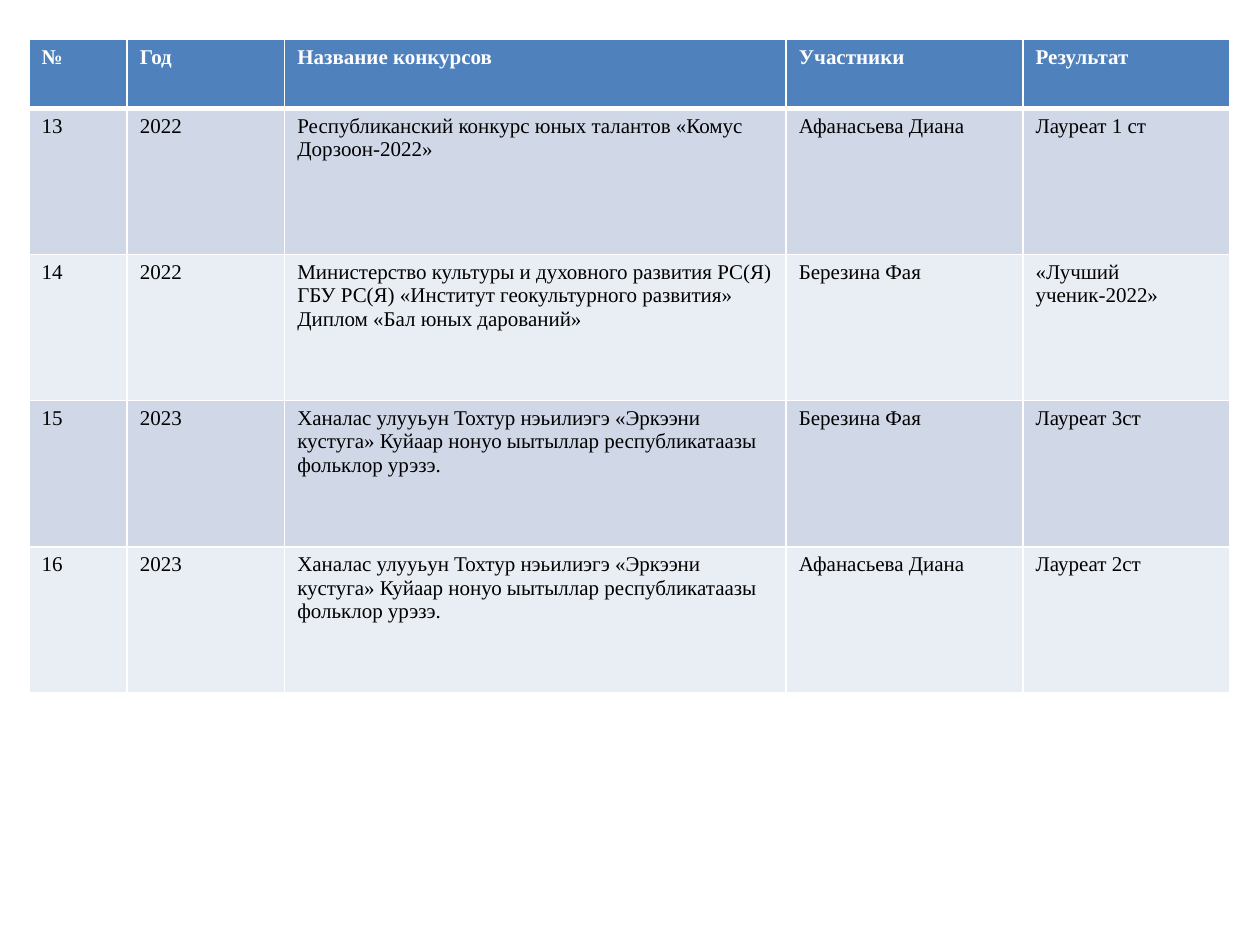
from lxml.etree import SubElement
from pptx import Presentation
from pptx.dml.color import RGBColor
from pptx.oxml.ns import qn
from pptx.util import Inches, Pt

COLORS = {
    "header": "4F81BD",
    "band_dark": "D0D8E8",
    "band_light": "E9EDF4",
    "border": "FFFFFF",
    "header_text": "FFFFFF",
    "body_text": "000000",
}
FONT = "Times New Roman"
COLUMN_WIDTHS = [0.78, 1.25, 3.98, 1.88, 1.64]
HEADER_HEIGHT = 0.55
ROW_HEIGHT = 1.16

HEADINGS = ["№", "Год", "Название конкурсов", "Участники", "Результат"]
FOLKLORE_CONTEST = (
    "Ханалас улууьун Тохтур нэьилиэгэ «Эркээни кустуга» "
    "Куйаар нонуо ыытыллар республикатаазы фольклор урэзэ."
)
CONTESTS = [
    ["13", "2022", "Республиканский конкурс юных талантов «Комус Дорзоон-2022»",
     "Афанасьева Диана", "Лауреат 1 ст"],
    ["14", "2022",
     "Министерство культуры и духовного развития РС(Я)\n"
     "ГБУ РС(Я) «Институт геокультурного развития»\n"
     "Диплом «Бал юных дарований»",
     "Березина Фая", "«Лучший ученик-2022»"],
    ["15", "2023", FOLKLORE_CONTEST, "Березина Фая", "Лауреат 3ст"],
    ["16", "2023", FOLKLORE_CONTEST, "Афанасьева Диана", "Лауреат 2ст"],
]


def rgb(name):
    return RGBColor.from_string(COLORS[name])


def set_borders(cell, top, bottom):
    """Draw white cell borders; top and bottom are widths in points."""
    properties = cell._tc.get_or_add_tcPr()
    for side, width in (("L", 1), ("R", 1), ("T", top), ("B", bottom)):
        line = SubElement(properties, qn(f"a:ln{side}"), w=str(Pt(width)))
        fill = SubElement(line, qn("a:solidFill"))
        SubElement(fill, qn("a:srgbClr"), val=COLORS["border"])


def fill_cell(cell, text, row):
    is_header = row == 0
    set_borders(cell, top=3 if row == 1 else 1, bottom=3 if is_header else 1)
    band = "header" if is_header else ("band_light", "band_dark")[row % 2]
    cell.fill.solid()
    cell.fill.fore_color.rgb = rgb(band)
    cell.text = text
    for paragraph in cell.text_frame.paragraphs:
        font = paragraph.font
        font.name, font.size, font.bold = FONT, Pt(12), is_header
        font.color.rgb = rgb("header_text" if is_header else "body_text")


def add_contest_table(slide, left, top):
    rows = [HEADINGS, *CONTESTS]
    heights = [HEADER_HEIGHT] + [ROW_HEIGHT] * len(CONTESTS)
    table = slide.shapes.add_table(
        len(rows), len(HEADINGS), left, top,
        Inches(sum(COLUMN_WIDTHS)), Inches(sum(heights)),
    ).table
    for column, width in zip(table.columns, COLUMN_WIDTHS):
        column.width = Inches(width)
    for number, (texts, height) in enumerate(zip(rows, heights)):
        table.rows[number].height = Inches(height)
        for cell, text in zip(table.rows[number].cells, texts):
            fill_cell(cell, text, number)


def main():
    deck = Presentation()
    deck.slide_width, deck.slide_height = Inches(10), Inches(7.5)
    slide = deck.slides.add_slide(deck.slide_layouts[6])
    add_contest_table(slide, Inches(0.23), Inches(0.31))
    deck.save("out.pptx")


if __name__ == "__main__":
    main()
